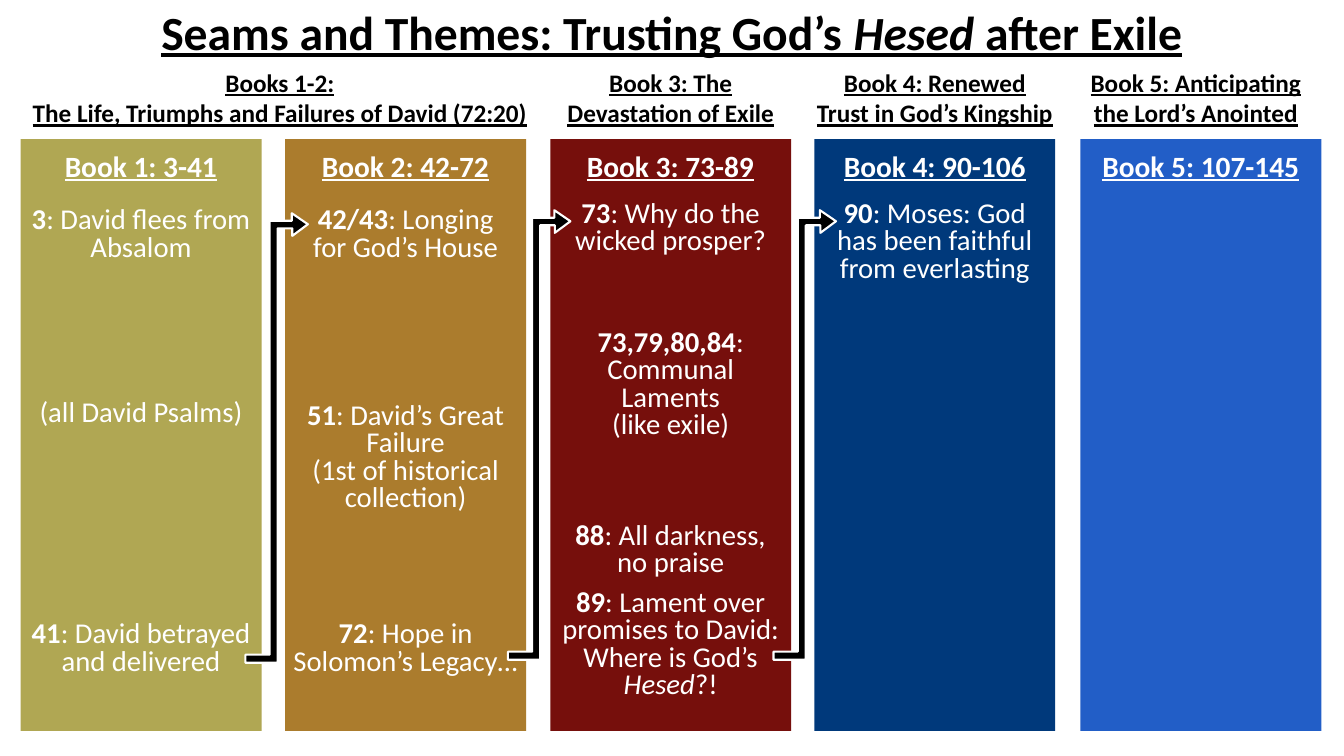
from pptx import Presentation
from pptx.dml.color import RGBColor
from pptx.enum.shapes import MSO_SHAPE
from pptx.enum.text import MSO_ANCHOR, MSO_AUTO_SIZE, PP_ALIGN
from pptx.util import Pt

PX = 9144  # EMU in one px, 100 px to the inch
WHITE = RGBColor(0xFF, 0xFF, 0xFF)
BLACK = RGBColor(0x00, 0x00, 0x00)
OLIVE = RGBColor(0xB0, 0xA7, 0x53)
BRONZE = RGBColor(0xAB, 0x7C, 0x2D)
MAROON = RGBColor(0x76, 0x0F, 0x0C)
NAVY = RGBColor(0x00, 0x39, 0x7B)
BLUE = RGBColor(0x22, 0x5E, 0xC7)

COLUMN_TOP, COLUMN_WIDTH, COLUMN_HEIGHT = 276, 478, 1174
NOTE_WIDTH = 466

# Left, fill, heading, heading width
COLUMNS = [
    (41, OLIVE, "Book 1: 3-41", 391),
    (566, BRONZE, "Book 2: 42-72", 391),
    (1092, MAROON, "Book 3: 73-89", 391),
    (1616, NAVY, "Book 4: 90-106", 440),
    (2144, BLUE, "Book 5: 107-145", 464),
]

# Left, width, paragraphs
THEMES = [
    (51, 1009, ["Books 1-2:", "The Life, Triumphs and Failures of David (72:20)"]),
    (1098, 466, ["Book 3: The Devastation of Exile"]),
    (1610, 490, ["Book 4: Renewed Trust in God’s Kingship"]),
    (2128, 490, ["Book 5: Anticipating the Lord’s Anointed"]),
]

# Column, top, height, paragraphs of (text, style) spans
NOTES = [
    (0, 404, 151, [[("3", "b"), (": David flees from Absalom", "")]]),
    (0, 786, 98, [[("(all David Psalms)", "")]]),
    (0, 1226, 151, [[("41", "b"), (": David betrayed and delivered", "")]]),
    (1, 404, 151, [[("42/43", "b"), (": Longing", "")], [("for God’s House", "")]]),
    (1, 792, 258, [[("51", "b"), (": David’s Great Failure", ""), ("\n", ""),
                    ("(1st of historical collection)", "")]]),
    (1, 1226, 151, [[("72", "b"), (": Hope in Solomon’s Legacy…", "")]]),
    (2, 391, 151, [[("73", "b"), (": Why do the wicked prosper?", "")]]),
    (2, 647, 280, [[("73,79,80,84", "b"), (": Communal Laments", ""), ("\n", ""),
                    ("(like exile)", "")]]),
    (2, 1030, 141, [[("88", "b"), (": All darkness, no praise", "")]]),
    (2, 1163, 248, [[("89", "b"), (": Lament over promises to David:", "")],
                    [("Where is God’s ", ""), ("Hesed", "i"), ("?!", "")]]),
    (3, 391, 198, [[("90", "b"), (": Moses: God has been faithful from everlasting", "")]]),
]

# Bent arrow outline, and where each arrow stands
ARROW = [(92, 0), (124, 22), (93, 45), (93, 30), (64, 30), (64, 892),
         (0, 892), (0, 876), (48, 876), (48, 15), (92, 15)]
ARROW_PLACES = [(487, 423), (1008, 417), (1535, 417)]


class SlideBuilder:
    """Holds the style and the current slide."""

    font = "Calibri"
    inset = 8

    def __init__(self, page):
        self.page = page

    def fill_text(self, box, paragraphs, size, color, spacing=1.0):
        frame = box.text_frame
        frame.word_wrap = True
        frame.auto_size = MSO_AUTO_SIZE.NONE
        frame.vertical_anchor = MSO_ANCHOR.TOP
        frame.margin_left = frame.margin_right = self.inset * PX
        frame.margin_top = frame.margin_bottom = self.inset * PX
        for index, spans in enumerate(paragraphs):
            para = frame.add_paragraph() if index else frame.paragraphs[0]
            para.alignment = PP_ALIGN.CENTER
            para.line_spacing = spacing
            for text, style in spans:
                if text == "\n":
                    para.add_line_break()
                    continue
                span = para.add_run()
                span.text = text
                span.font.name = self.font
                span.font.size = Pt(size)
                span.font.color.rgb = color
                span.font.bold = "b" in style
                span.font.italic = "i" in style
                span.font.underline = "u" in style

    def title(self, left, top, width, height, spans):
        box = self.page.shapes.title
        box.left, box.top = left * PX, top * PX
        box.width, box.height = width * PX, height * PX
        self.fill_text(box, [spans], 68, BLACK)

    def text(self, left, top, width, height, paragraphs, size, color, spacing=1.0):
        box = self.page.shapes.add_textbox(left * PX, top * PX, width * PX, height * PX)
        self.fill_text(box, paragraphs, size, color, spacing)

    def panel(self, left, top, width, height, fill):
        shape = self.page.shapes.add_shape(
            MSO_SHAPE.RECTANGLE, left * PX, top * PX, width * PX, height * PX)
        shape.shadow.inherit = False
        shape.fill.solid()
        shape.fill.fore_color.rgb = fill
        shape.line.fill.background()

    def arrow(self, left, top):
        points = [(left + x, top + y) for x, y in ARROW]
        outline = self.page.shapes.build_freeform(*points[0], scale=PX)
        outline.add_line_segments(points[1:], close=True)
        shape = outline.convert_to_shape()
        shape.shadow.inherit = False
        shape.fill.solid()
        shape.fill.fore_color.rgb = BLACK
        shape.line.color.rgb = WHITE
        shape.line.width = Pt(3)


def main():
    deck = Presentation()
    deck.slide_width, deck.slide_height = 2667 * PX, 1500 * PX
    builder = SlideBuilder(deck.slides.add_slide(deck.slide_layouts[5]))

    # Title
    builder.title(137, -3, 2392, 141, [
        ("Seams and Themes: Trusting God’s ", "bu"), ("Hesed", "biu"), (" after Exile", "bu")])

    # Book columns with their headings
    for left, fill, heading, width in COLUMNS:
        builder.panel(left, COLUMN_TOP, COLUMN_WIDTH, COLUMN_HEIGHT, fill)
        builder.text(left + (COLUMN_WIDTH - width) // 2, 285, width, 102,
                     [[(heading, "bu")]], 42, WHITE)

    # Themes above the columns
    for left, width, lines in THEMES:
        builder.text(left, 126, width, 141, [[(line, "bu")] for line in lines], 36, BLACK)

    # Psalm notes
    for column, top, height, paragraphs in NOTES:
        left = COLUMNS[column][0] + (COLUMN_WIDTH - NOTE_WIDTH) // 2
        builder.text(left, top, NOTE_WIDTH, height, paragraphs, 41, WHITE, 0.8)

    # Arrows from the end of one book to the start of the next
    for left, top in ARROW_PLACES:
        builder.arrow(left, top)

    deck.save("out.pptx")


if __name__ == "__main__":
    main()
